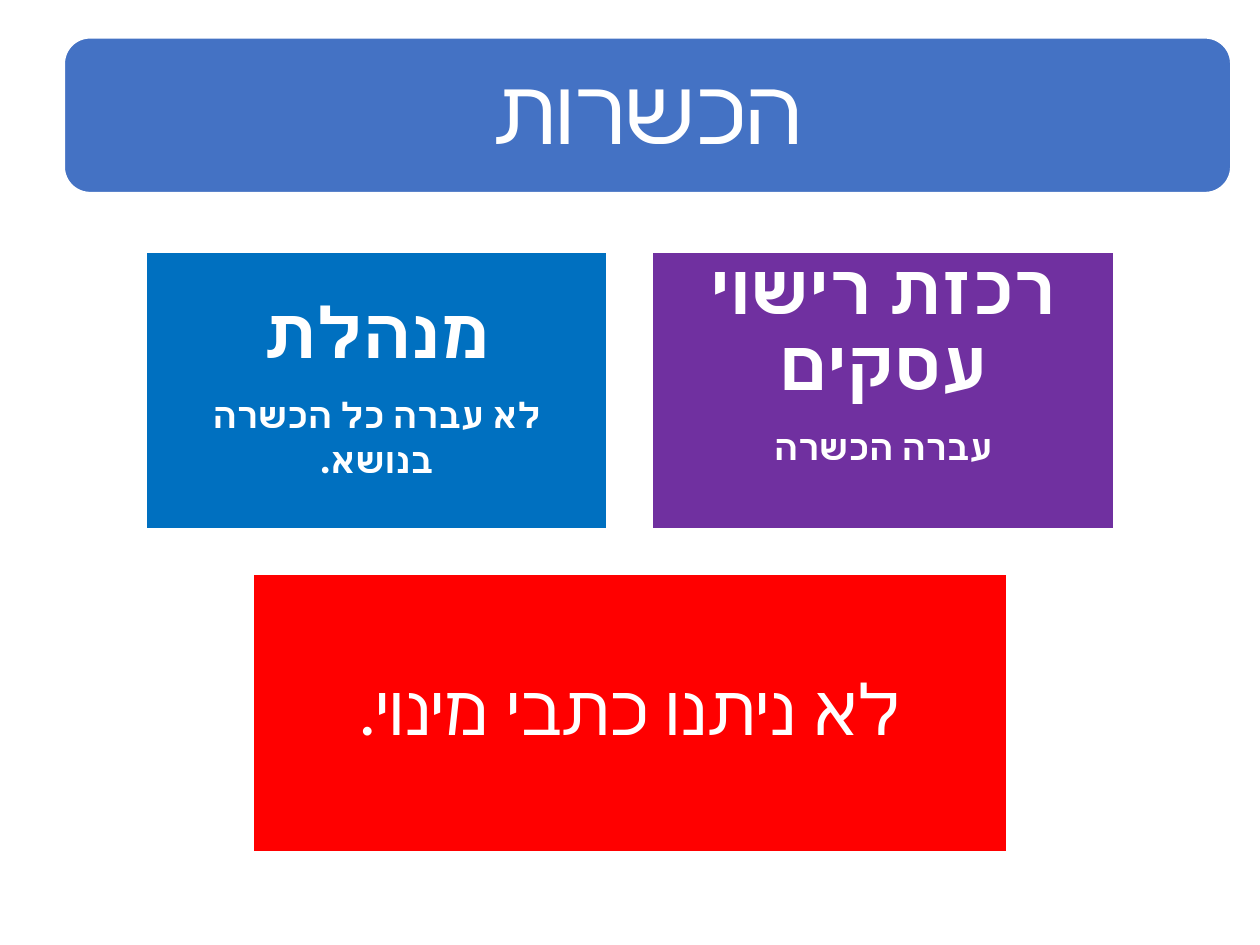
from pptx import Presentation
from pptx.dml.color import RGBColor
from pptx.enum import shapes, text
from pptx.oxml import parse_xml
from pptx.oxml import ns
from pptx.util import Inches, Pt

COLORS = {"bar": "4472C4", "manager": "0070C0", "coordinator": "7030A0",
          "letters": "FF0000", "white": "FFFFFF"}
FONT = "Lato"
BOX_HEIGHT = 2.2


def add_block(s, kind, left, top, width, height, color):
    block = s.shapes.add_shape(kind, Inches(left), Inches(top),
                               Inches(width), Inches(height))
    block.shadow.inherit = False
    block.fill.solid()
    block.fill.fore_color.rgb = RGBColor.from_string(COLORS[color])
    block.line.color.rgb = RGBColor.from_string(COLORS["white"])
    block.line.width = Pt(1)
    return block


def write(tf, paragraphs, inset, bold=False):
    """Fill a frame with centred right-to-left paragraphs, each a list of (text, size)."""
    tf.word_wrap = True
    tf.auto_size = text.MSO_AUTO_SIZE.NONE
    tf.vertical_anchor = text.MSO_ANCHOR.MIDDLE
    tf.margin_left = tf.margin_right = Inches(inset)
    tf.margin_top = tf.margin_bottom = Inches(inset)
    for i, runs in enumerate(paragraphs):
        p = tf.paragraphs[0] if i == 0 else tf.add_paragraph()
        p.alignment = text.PP_ALIGN.CENTER
        p.line_spacing = 0.9
        p.space_after = Pt(0.35 * runs[0][1])
        p._p.get_or_add_pPr().set("rtl", "1")
        for words, size in runs:
            r = p.add_run()
            r.text = words
            r.font.name = FONT
            r.font.size = Pt(size)
            r.font.bold = bold
            r.font.color.rgb = RGBColor.from_string(COLORS["white"])
            # Hebrew takes its typeface from the complex-script font
            r._r.get_or_add_rPr().append(
                parse_xml(f'<a:cs {ns.nsdecls("a")} typeface="{FONT}"/>'))


prs = Presentation()
prs.slide_width, prs.slide_height = Inches(10), Inches(7.5)
s = prs.slides.add_slide(prs.slide_layouts[5])

# Title on its rounded bar
bar = add_block(s, shapes.MSO_SHAPE.ROUNDED_RECTANGLE, 0.51, 0.3, 9.26, 1.23, "bar")
title = s.shapes.title
title.left, title.top = Inches(0.57), Inches(0.36)
title.width, title.height = Inches(9.14), Inches(1.11)
title.element.addprevious(bar.element)
write(title.text_frame, [[("הכשרות", 52)]], 0.22)

# Boxes: left, top, width, colour, bold, paragraphs
boxes = [
    (1.16, 2, 3.66, "manager", True,
     [[("מנהלת", 40)], [("לא עברה כל הכשרה בנושא", 20), (".", 25)]]),
    (5.18, 2, 3.66, "coordinator", True,
     [[("רכזת רישוי עסקים", 40)], [("עברה הכשרה", 20)]]),
    (2.01, 4.56, 5.98, "letters", False,
     [[("לא ניתנו כתבי מינוי.", 40)]]),
]
for left, top, width, color, bold, paragraphs in boxes:
    sp = add_block(s, shapes.MSO_SHAPE.RECTANGLE, left, top, width, BOX_HEIGHT, color)
    write(sp.text_frame, paragraphs, 0.17, bold)
    if color == "coordinator":  # this text sits at the top of its box
        sp.text_frame.vertical_anchor = text.MSO_ANCHOR.TOP
        sp.text_frame.margin_top = Inches(0.02)

prs.save("out.pptx")
